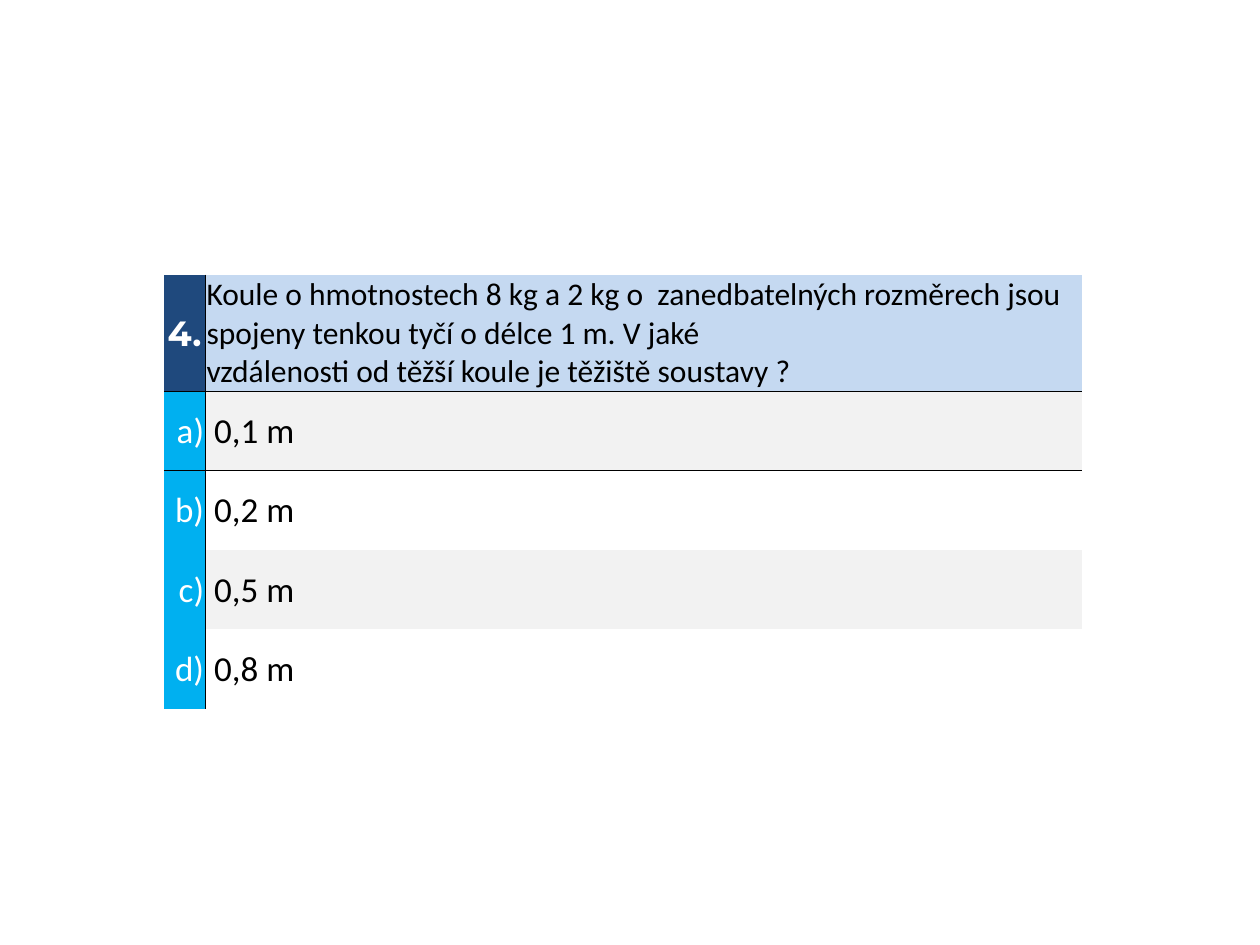
from pptx import Presentation
from pptx.dml.color import RGBColor
from pptx.enum.text import MSO_ANCHOR as Anchor, PP_ALIGN as Align
from pptx.oxml import parse_xml
from pptx.oxml.ns import nsdecls
from pptx.util import Inches, Pt

PLAIN_TABLE_STYLE = "{2D5ABB26-0587-4C30-8999-92F81FD0307C}"
QUESTION = [
    "Koule o hmotnostech 8 kg a 2 kg o  zanedbatelných rozměrech jsou "
    "spojeny tenkou tyčí o délce 1 m. V jaké",
    "vzdálenosti od těžší koule je těžiště soustavy ?",
]
ANSWERS = [("a)", "0,1 m"), ("b)", "0,2 m"), ("c)", "0,5 m"), ("d)", "0,8 m")]


def color(value):
    return RGBColor.from_string(value)


def add_borders(cell, sides):
    """Draw thin black borders; sides holds letters in the order L, R, T, B."""
    for side in sides:
        cell._tc.get_or_add_tcPr().append(parse_xml(
            f'<a:ln{side} {nsdecls("a")} w="{Pt(0.5)}"><a:solidFill>'
            f'<a:srgbClr val="000000"/></a:solidFill></a:ln{side}>'))


def fill_cell(cell, lines, size, text_color, fill=None, sides="",
              align=Align.LEFT, font="Calibri", bold=False, indent=0.01):
    cell.margin_left = Inches(indent)
    cell.margin_right = cell.margin_top = Inches(0.01)
    cell.margin_bottom = 0
    cell.vertical_anchor = Anchor.MIDDLE
    add_borders(cell, sides)
    if fill:
        cell.fill.solid()
        cell.fill.fore_color.rgb = color(fill)
    else:
        cell.fill.background()
    cell.text_frame.text = "\n".join(lines)
    for para in cell.text_frame.paragraphs:
        para.alignment = align
        for span in para.runs:
            span.font.name = font
            span.font.size = Pt(size)
            span.font.bold = bold
            span.font.color.rgb = color(text_color)


def add_quiz(page, left, top, width, header_height, row_height):
    height = header_height + row_height * len(ANSWERS)
    frame = page.shapes.add_table(len(ANSWERS) + 1, 2, left, top, width, height)
    table = frame.table
    table._tbl.tblPr.find("{*}tableStyleId").text = PLAIN_TABLE_STYLE
    table.first_row = table.horz_banding = False
    label_width = Inches(0.33)
    table.columns[0].width = label_width
    table.columns[1].width = width - label_width
    for index, row in enumerate(table.rows):
        row.height = row_height if index else header_height

    # Question number and wording
    fill_cell(table.cell(0, 0), ["4."], 20, "FFFFFF", "1F497D", "RB",
              Align.CENTER, "Montserrat", True)
    fill_cell(table.cell(0, 1), QUESTION, 18, "000000", "C5D9F1", "LB")

    # Answers, with every other row shaded
    for index, (letter, answer) in enumerate(ANSWERS, start=1):
        top_side = "T" if index == 1 else ""
        fill_cell(table.cell(index, 0), [letter], 20, "FFFFFF", "00B0F0",
                  "R" + top_side, Align.RIGHT)
        fill_cell(table.cell(index, 1), [answer], 20, "000000",
                  "F2F2F2" if index % 2 else None, "L" + top_side, indent=0.07)


def main():
    deck = Presentation()
    deck.slide_width, deck.slide_height = Inches(10), Inches(7.5)
    page = deck.slides.add_slide(deck.slide_layouts[6])
    add_quiz(page, Inches(1.3), Inches(2.18), Inches(7.29),
             Inches(0.92), Inches(0.63))
    deck.save("out.pptx")


if __name__ == "__main__":
    main()
